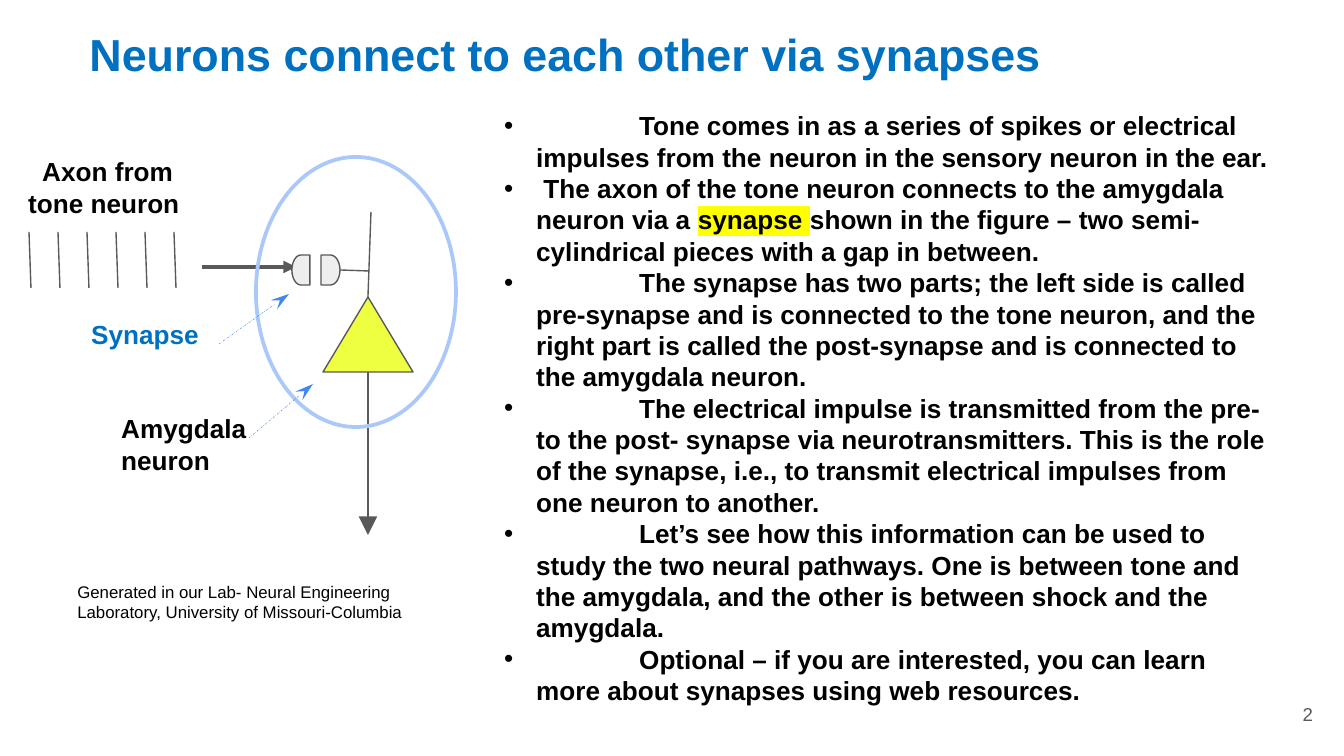
from lxml import etree
from pptx import Presentation
from pptx.dml.color import RGBColor
from pptx.enum.dml import MSO_LINE
from pptx.enum.shapes import MSO_CONNECTOR, MSO_SHAPE
from pptx.enum.text import MSO_ANCHOR, PP_ALIGN
from pptx.oxml.ns import qn
from pptx.util import Pt

SCALE = 914400 / 134.4
LEFT, CENTER, RIGHT = PP_ALIGN.LEFT, PP_ALIGN.CENTER, PP_ALIGN.RIGHT
TOP, MIDDLE = MSO_ANCHOR.TOP, MSO_ANCHOR.MIDDLE
STRAIGHT = MSO_CONNECTOR.STRAIGHT
DASH_DOT = MSO_LINE.DASH_DOT
TRIANGLE = MSO_SHAPE.ISOSCELES_TRIANGLE
DELAY, OVAL = MSO_SHAPE.FLOWCHART_DELAY, MSO_SHAPE.OVAL
FONT = "Arial"
BLACK, BLUE, GRAY = "000000", "0070C0", "595959"
POINTER_BLUE, RING_BLUE = "4285F4", "AAC8FA"
YELLOW, PALE, HIGHLIGHT = "EEFF41", "EEEEEE", "FFFF00"

TITLE = ("Neurons connect to each other via synapses", (62, 20, 1006, 67), 24, BLUE, True, CENTER)
LABELS = [
    ("Amygdala neuron", (108, 406, 214, 77), 14, BLACK, True, LEFT),
    ("Synapse", (78, 312, 214, 70), 14, BLUE, True, LEFT),
    ("Generated in our Lab- Neural Engineering Laboratory, University of Missouri-Columbia",
     (64, 575, 379, 55), 9, BLACK, False, LEFT),
]
AXON_LABEL = ("Axon from tone neuron", (15, 149, 185, 77), 14, BLACK, True, LEFT)
AXON_INDENT = 14
PAGE_NUMBER = ("2", (1246, 685, 80, 58), 10, GRAY, False, RIGHT)
PAGE_NUMBER_INSET = 13

BULLETS_BOX = (491, 103, 797, 646)
BULLET_INDENT, BULLET_TAB = 32, 135
BULLETS = [
    [" \tTone comes in as a series of spikes or electrical impulses from the neuron in the sensory neuron in the ear."],
    [" The axon of the tone neuron connects to the amygdala neuron via a ", "synapse ",
     "shown in the figure – two semi-cylindrical pieces with a gap in between."],
    [" \tThe synapse has two parts; the left side is called pre-synapse and is connected to the tone neuron, "
     "and the right part is called the post-synapse and is connected to the amygdala neuron."],
    [" \tThe electrical impulse is transmitted from the pre- to the post- synapse via neurotransmitters. "
     "This is the role of the synapse, i.e., to transmit electrical impulses from one neuron to another."],
    [" \tLet’s see how this information can be used to study the two neural pathways. "
     "One is between tone and the amygdala, and the other is between shock and the amygdala."],
    [" \tOptional – if you are interested, you can learn more about synapses using web resources."],
]
HIGHLIGHTED = "synapse "

SPIKE_COUNT, SPIKE_STEP, SPIKE_SLANT = 6, 29, 2
SPIKE_LEFT, SPIKE_TOP, SPIKE_BOTTOM = 29, 232, 288
AXON = (202, 267, 296, 267)
CELL_BODY = (323, 297, 90, 75)
PRE_SYNAPSE = (292, 255, 18, 30)
POST_SYNAPSE = (321, 255, 19, 30)
DENDRITES = [(368, 297, 371, 212), (340, 270, 368, 271)]
OUTPUT_AXON = (368, 372, 368, 535)
RING = (256, 157, 200, 270)
POINTERS = [(249, 438, 313, 384), (219, 344, 289, 294)]


def px(value):
    return round(value * SCALE)


def color(value):
    return RGBColor.from_string(value)


def style_paragraph(paragraph, size, text_color, bold, align=LEFT):
    paragraph.alignment = align
    font = paragraph.font
    font.name, font.size, font.bold = FONT, Pt(size), bold
    font.color.rgb = color(text_color)


def add_box(slide, box, anchor=TOP):
    frame = slide.shapes.add_textbox(*map(px, box)).text_frame
    frame.word_wrap = True
    frame.vertical_anchor = anchor
    return frame


def add_text(slide, text, box, size, text_color, bold, align, anchor=TOP):
    frame = add_box(slide, box, anchor)
    paragraph = frame.paragraphs[0]
    paragraph.text = text
    style_paragraph(paragraph, size, text_color, bold, align)
    return frame


def add_line(slide, ends, line_color=GRAY, width=0.75, head=None, head_size=("med", "med"), dash=None):
    connector = slide.shapes.add_connector(STRAIGHT, *map(px, ends))
    connector.line.color.rgb = color(line_color)
    connector.line.width = Pt(width)
    if dash is not None:
        connector.line.dash_style = dash
    if head:
        head_width, head_length = head_size
        outline = connector.line._get_or_add_ln()
        etree.SubElement(outline, qn("a:tailEnd"), type=head, w=head_width, len=head_length)
    etree.SubElement(connector._element.spPr, qn("a:effectLst"))


def add_shape(slide, kind, box, fill, line_color=GRAY, width=0.75):
    shape = slide.shapes.add_shape(kind, *map(px, box))
    shape.shadow.inherit = False
    if fill:
        shape.fill.solid()
        shape.fill.fore_color.rgb = color(fill)
    else:
        shape.fill.background()
    shape.line.color.rgb = color(line_color)
    shape.line.width = Pt(width)
    return shape


def add_bullet(paragraph):
    properties = paragraph._p.get_or_add_pPr()
    properties.set("marL", str(px(BULLET_INDENT)))
    properties.set("indent", str(-px(BULLET_INDENT)))
    bullet_color = etree.Element(qn("a:buClr"))
    etree.SubElement(bullet_color, qn("a:srgbClr"), val=BLACK)
    tabs = etree.Element(qn("a:tabLst"))
    etree.SubElement(tabs, qn("a:tab"), pos=str(px(BULLET_TAB)), algn="l")
    parts = [bullet_color, etree.Element(qn("a:buFont"), typeface=FONT),
             etree.Element(qn("a:buChar"), char="•"), tabs]
    for position, part in enumerate(parts):
        properties.insert(position, part)


def add_bullets(slide):
    frame = add_box(slide, BULLETS_BOX)
    for index, texts in enumerate(BULLETS):
        paragraph = frame.add_paragraph() if index else frame.paragraphs[0]
        style_paragraph(paragraph, 14, BLACK, True)
        add_bullet(paragraph)
        for text in texts:
            run = paragraph.add_run()
            run.text = text
            if text == HIGHLIGHTED:
                highlight = etree.SubElement(run._r.get_or_add_rPr(), qn("a:highlight"))
                etree.SubElement(highlight, qn("a:srgbClr"), val=HIGHLIGHT)


def add_diagram(slide):
    for index in range(SPIKE_COUNT):
        x = SPIKE_LEFT + index * SPIKE_STEP
        add_line(slide, (x, SPIKE_TOP, x + SPIKE_SLANT, SPIKE_BOTTOM))
    add_line(slide, AXON, width=2.25, head="triangle")
    add_shape(slide, TRIANGLE, CELL_BODY, YELLOW)
    pre_synapse = add_shape(slide, DELAY, PRE_SYNAPSE, PALE)
    pre_synapse._element.spPr.xfrm.set("flipH", "1")
    add_shape(slide, DELAY, POST_SYNAPSE, PALE)
    for dendrite in DENDRITES:
        add_line(slide, dendrite)
    add_line(slide, OUTPUT_AXON, head="triangle", head_size=("lg", "lg"))
    add_shape(slide, OVAL, RING, None, RING_BLUE, 2)
    for pointer in POINTERS:
        add_line(slide, pointer, POINTER_BLUE, 0.25, "stealth", ("med", "lg"), DASH_DOT)


def main():
    presentation = Presentation()
    presentation.slide_width, presentation.slide_height = px(1344), px(756)
    slide = presentation.slides.add_slide(presentation.slide_layouts[6])
    add_text(slide, *TITLE)
    number = add_text(slide, *PAGE_NUMBER, MIDDLE)
    number.margin_left = number.margin_right = px(PAGE_NUMBER_INSET)
    number.margin_top = number.margin_bottom = px(PAGE_NUMBER_INSET)
    add_bullets(slide)
    add_diagram(slide)
    axon_label = add_text(slide, *AXON_LABEL)
    axon_label.paragraphs[0]._p.get_or_add_pPr().set("indent", str(px(AXON_INDENT)))
    for label in LABELS:
        add_text(slide, *label)
    presentation.save("out.pptx")


if __name__ == "__main__":
    main()
